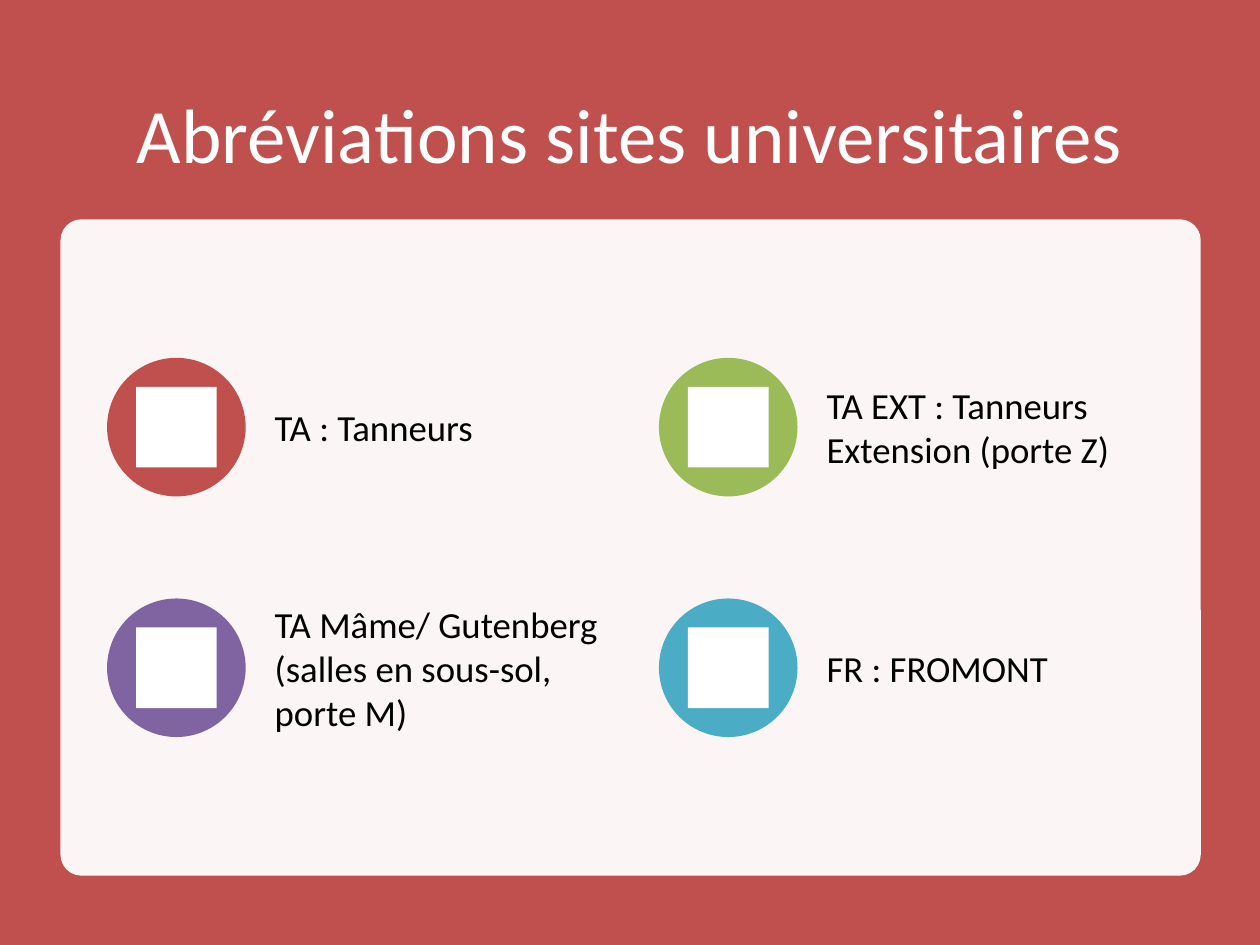
from dataclasses import dataclass

from lxml import etree
from pptx import Presentation
from pptx.dml.color import RGBColor
from pptx.enum.shapes import MSO_SHAPE
from pptx.enum.text import MSO_ANCHOR, PP_ALIGN
from pptx.oxml.ns import qn
from pptx.util import Inches, Pt

RECTANGLE = MSO_SHAPE.RECTANGLE
ROUNDED = MSO_SHAPE.ROUNDED_RECTANGLE
OVAL = MSO_SHAPE.OVAL
MIDDLE = MSO_ANCHOR.MIDDLE
CENTER = PP_ALIGN.CENTER
LEFT = PP_ALIGN.LEFT


@dataclass(frozen=True)
class Theme:
    font: str = "Calibri"
    title_size: int = 44
    label_size: int = 21
    red: str = "C0504D"
    green: str = "9BBB59"
    purple: str = "8064A2"
    blue: str = "4BACC6"
    white: str = "FFFFFF"
    black: str = "000000"


theme = Theme()


def add_block(kind, left, top, width, height, color):
    block = slide.shapes.add_shape(
        kind, Inches(left), Inches(top), Inches(width), Inches(height)
    )
    block.shadow.inherit = False
    block.fill.solid()
    block.fill.fore_color.rgb = RGBColor.from_string(color)
    block.line.fill.background()
    return block


def write_text(frame, wording, size, color, align):
    frame.word_wrap = True
    frame.vertical_anchor = MIDDLE
    paragraph = frame.paragraphs[0]
    paragraph.alignment = align
    run = paragraph.add_run()
    run.text = wording
    run.font.name = theme.font
    run.font.size = Pt(size)
    run.font.color.rgb = RGBColor.from_string(color)


prs = Presentation()
prs.slide_width = Inches(10)
prs.slide_height = Inches(7.5)
slide = prs.slides.add_slide(prs.slide_layouts[5])

title = slide.shapes.title
title.left, title.top = Inches(0.69), Inches(0.5)
title.width, title.height = Inches(8.62), Inches(1.1)
write_text(title.text_frame, "Abréviations sites universitaires",
           theme.title_size, theme.white, CENTER)

backdrop = add_block(RECTANGLE, 0, 0, 10, 7.5, theme.red)
title.element.addprevious(backdrop.element)

panel = add_block(ROUNDED, 0.48, 1.74, 9.05, 5.21, theme.white)
panel.adjustments[0] = 0.032
panel_color = panel.fill._xPr.find(qn("a:solidFill"))[0]
etree.SubElement(panel_color, qn("a:alpha"), val="95000")

sites = [
    ("TA : Tanneurs", theme.red),
    ("TA EXT : Tanneurs Extension (porte Z)", theme.green),
    ("TA Mâme/ Gutenberg (salles en sous-sol, porte M)", theme.purple),
    ("FR : FROMONT", theme.blue),
]
GRID_LEFT, GRID_TOP = 0.85, 2.84
COLUMN_STEP, ROW_STEP = 4.38, 1.91
DISC, ICON = 1.1, 0.64
ICON_INSET = (DISC - ICON) / 2
LABEL_OFFSET, LABEL_WIDTH = 1.33, 2.59

for index, (site, color) in enumerate(sites):
    row, column = divmod(index, 2)
    left = GRID_LEFT + column * COLUMN_STEP
    top = GRID_TOP + row * ROW_STEP
    add_block(OVAL, left, top, DISC, DISC, color)
    add_block(RECTANGLE, left + ICON_INSET, top + ICON_INSET, ICON, ICON, theme.white)
    label = slide.shapes.add_textbox(
        Inches(left + LABEL_OFFSET), Inches(top), Inches(LABEL_WIDTH), Inches(DISC)
    ).text_frame
    label.margin_left = label.margin_right = Inches(0)
    label.margin_top = label.margin_bottom = Inches(0)
    write_text(label, site, theme.label_size, theme.black, LEFT)

prs.save("out.pptx")
